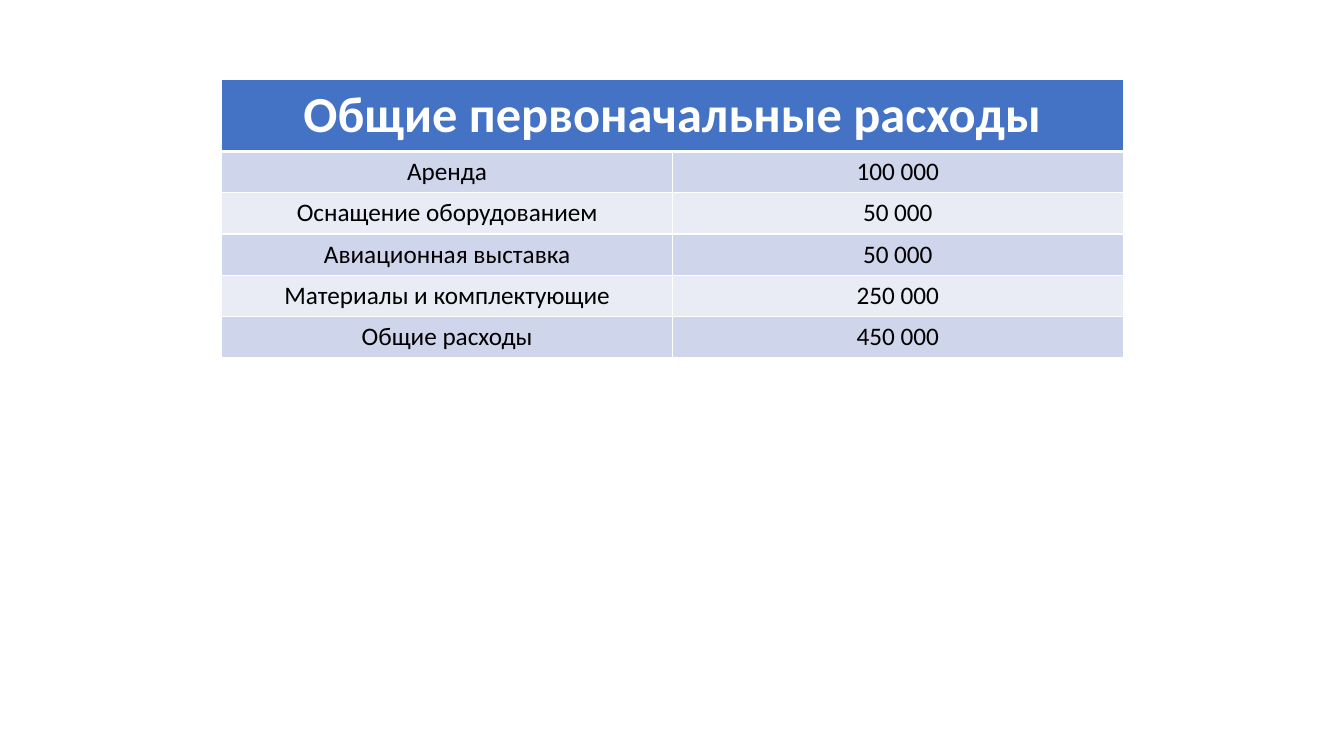
from pptx import Presentation, util as u
from pptx.dml.color import RGBColor
from pptx.enum import text
from pptx.oxml import parse_xml
from pptx.oxml.ns import nsdecls

TITLE = "Общие первоначальные расходы"
EXPENSES = [
    ("Аренда", "100 000"),
    ("Оснащение оборудованием", "50 000"),
    ("Авиационная выставка", "50 000"),
    ("Материалы и комплектующие", "250 000"),
    ("Общие расходы", "450 000"),
]
SLIDE = (13.33, 7.5)
LEFT, TOP, HEIGHT = 2.2, 0.79, 2.73
COLUMN, ROW = 4.47, 0.41
HEADER_FILL, BANDS, BORDER = "4472C4", ("CFD5EA", "E9EBF5"), "FFFFFF"
HEADER_FONT = {"name": "Calibri", "size": u.Pt(36), "bold": True}
BODY_FONT = {"name": "Calibri", "size": u.Pt(18), "bold": False}


def paint(color_format, value):
    color_format.rgb = RGBColor.from_string(value)


def add_borders(cell, widths):
    properties = cell._tc.get_or_add_tcPr()
    for index, (side, points) in enumerate(widths.items()):
        properties.insert(index, parse_xml(
            f'<a:ln{side} {nsdecls("a")} w="{u.Pt(points)}"><a:solidFill>'
            f'<a:srgbClr val="{BORDER}"/></a:solidFill></a:ln{side}>'))


def fill_cell(cell, words, fill, font, color, widths):
    cell.fill.solid()
    paint(cell.fill.fore_color, fill)
    add_borders(cell, widths)
    para = cell.text_frame.paragraphs[0]
    para.alignment = text.PP_ALIGN.CENTER
    if words:
        span = para.add_run()
        span.text = words
        for name, value in font.items():
            setattr(span.font, name, value)
        paint(span.font.color, color)


def main():
    deck = Presentation()
    deck.slide_width, deck.slide_height = map(u.Inches, SLIDE)
    page = deck.slides.add_slide(deck.slide_layouts[6])
    rows = [(TITLE, ""), *EXPENSES]
    columns = len(rows[0])
    frame = page.shapes.add_table(
        len(rows), columns, u.Inches(LEFT), u.Inches(TOP),
        u.Inches(COLUMN * columns), u.Inches(HEIGHT))
    table = frame.table
    for column in table.columns:
        column.width = u.Inches(COLUMN)
    for row in table.rows:
        row.height = u.Inches(ROW)
    frame.height = u.Inches(HEIGHT)
    table.cell(0, 0).merge(table.cell(0, columns - 1))
    for index, words in enumerate(rows):
        header = index == 0
        fill = HEADER_FILL if header else BANDS[(index - 1) % 2]
        font, color = (HEADER_FONT, "FFFFFF") if header else (BODY_FONT, "000000")
        widths = {"L": 1, "R": 1, "T": 3 if index == 1 else 1, "B": 3 if header else 1}
        for column, word in enumerate(words):
            fill_cell(table.cell(index, column), word, fill, font, color, widths)
    deck.save("out.pptx")


if __name__ == "__main__":
    main()
